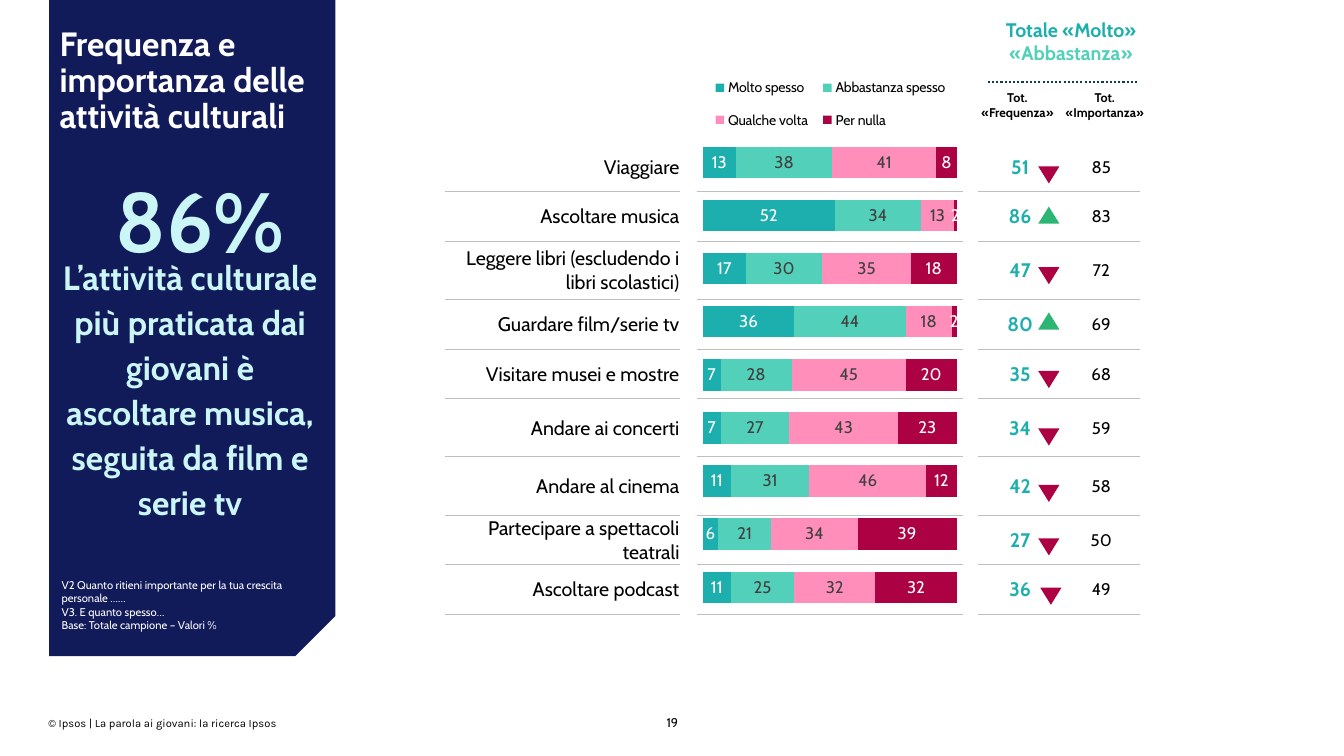
from dataclasses import dataclass

from lxml import etree
from pptx import Presentation
from pptx.chart.chart import Chart
from pptx.chart.data import CategoryChartData
from pptx.dml.color import RGBColor
from pptx.enum.chart import XL_CHART_TYPE, XL_LABEL_POSITION, XL_LEGEND_POSITION
from pptx.enum.dml import MSO_LINE
from pptx.enum.shapes import MSO_CONNECTOR, MSO_SHAPE
from pptx.enum.text import MSO_ANCHOR, PP_ALIGN
from pptx.oxml.ns import qn
from pptx.slide import Slide
from pptx.table import Table, _Cell
from pptx.text.text import Font, TextFrame
from pptx.util import Inches, Pt

STACKED_BAR = XL_CHART_TYPE.BAR_STACKED
LABEL_CENTER = XL_LABEL_POSITION.CENTER
LEGEND_TOP = XL_LEGEND_POSITION.TOP
DOTTED = MSO_LINE.ROUND_DOT
STRAIGHT = MSO_CONNECTOR.STRAIGHT
SNIPPED, TRIANGLE = MSO_SHAPE.SNIP_1_RECTANGLE, MSO_SHAPE.ISOSCELES_TRIANGLE
TOP, MIDDLE, BOTTOM = MSO_ANCHOR.TOP, MSO_ANCHOR.MIDDLE, MSO_ANCHOR.BOTTOM
LEFT, CENTER, RIGHT = PP_ALIGN.LEFT, PP_ALIGN.CENTER, PP_ALIGN.RIGHT

SLIDE_WIDTH, SLIDE_HEIGHT = Inches(13.33), Inches(7.5)
PLAIN_TABLE_STYLE = "{2D5ABB26-0587-4C30-8999-92F81FD0307C}"


@dataclass(frozen=True)
class Theme:
    font: str = "Cabin"
    footer_font: str = "Karla"
    black: str = "000000"
    white: str = "FFFFFF"
    navy: str = "121B5A"
    ice: str = "CBF6F6"
    teal: str = "1DAFAD"
    mint: str = "53D0B9"
    pink: str = "FF8FBA"
    crimson: str = "AC0142"
    green: str = "2DB574"
    gray: str = "404040"
    rule: str = "BFBFBF"
    dots: str = "103C50"
    tiny: int = 8
    small: int = 9
    legend: int = 10
    value: int = 12
    body: int = 14
    title: int = 24
    figure: int = 60


THEME = Theme()


@dataclass(frozen=True)
class Box:
    left: float
    top: float
    width: float
    height: float

    def lengths(self) -> tuple[int, int, int, int]:
        return across(self.left), down(self.top), across(self.width), down(self.height)


@dataclass(frozen=True)
class Style:
    size: int
    color: str = THEME.black
    bold: bool = False
    align: PP_ALIGN = LEFT
    anchor: MSO_ANCHOR = TOP
    spacing: float = 1.0
    font: str = THEME.font


@dataclass(frozen=True)
class Label:
    box: Box
    lines: tuple[str, ...]
    style: Style


@dataclass(frozen=True)
class Answer:
    name: str
    color: str
    label_color: str


@dataclass(frozen=True)
class Activity:
    name: str
    shares: tuple[int, int, int, int]
    importance: int
    row_height: float
    marker_top: float
    marker_left: float = 77.25

    @property
    def frequency(self) -> int:
        return sum(self.shares[:2])


ANSWERS = (
    Answer("Molto spesso", THEME.teal, THEME.white),
    Answer("Abbastanza spesso", THEME.mint, THEME.gray),
    Answer("Qualche volta", THEME.pink, THEME.gray),
    Answer("Per nulla", THEME.crimson, THEME.white),
)
ACTIVITIES = (
    Activity("Viaggiare", (13, 38, 41, 8), 85, 6.55, 22),
    Activity("Ascoltare musica", (52, 34, 13, 2), 83, 6.55, 27.33),
    Activity("Leggere libri (escludendo i libri scolastici)", (17, 30, 35, 18), 72, 7.73, 35.33),
    Activity("Guardare film/serie tv", (36, 44, 18, 2), 69, 6.55, 41.33),
    Activity("Visitare musei e mostre", (7, 28, 45, 20), 68, 6.55, 49.07),
    Activity("Andare ai concerti", (7, 27, 43, 23), 59, 7.7, 56.67),
    Activity("Andare al cinema", (11, 31, 46, 12), 58, 7.73, 64.13),
    Activity("Partecipare a spettacoli teatrali", (6, 21, 34, 39), 50, 6.55, 71.2),
    Activity("Ascoltare podcast", (11, 25, 32, 32), 49, 6.55, 77.73, 77.4),
)
LABELS = (
    Label(Box(48, 94.6, 4.05, 2), ("19",), Style(THEME.small, align=CENTER)),
    Label(Box(3.6, 94.7, 22.73, 2), ("© Ipsos | La parola ai giovani: la ricerca Ipsos",),
          Style(THEME.tiny, font=THEME.footer_font)),
    Label(Box(4.58, 76.4, 18.15, 7.2),
          ("V2 Quanto ritieni importante per la tua crescita personale ……",
           "V3. E quanto spesso…", "Base: Totale campione – Valori %"),
          Style(THEME.tiny, THEME.white, anchor=BOTTOM)),
    Label(Box(4.43, 3.6, 19.73, 13.47), ("Frequenza e importanza delle attività culturali",),
          Style(THEME.title, THEME.white, True, spacing=0.9)),
    Label(Box(4.5, 33.33, 19.28, 41.6),
          ("L’attività culturale più praticata dai giovani è ascoltare musica, "
           "seguita da film e serie tv",),
          Style(THEME.title, THEME.ice, True, CENTER, spacing=1.12)),
    Label(Box(8.63, 20.67, 12.68, 13.6), ("86%",),
          Style(THEME.figure, THEME.ice, True, spacing=1.12)),
)


def across(percent: float) -> int:
    return round(SLIDE_WIDTH * percent / 100)


def down(percent: float) -> int:
    return round(SLIDE_HEIGHT * percent / 100)


def set_font(font: Font, size: int, color: str, bold: bool = False, name: str = THEME.font) -> None:
    font.size, font.bold, font.name = Pt(size), bold, name
    font.color.rgb = RGBColor.from_string(color)


def write_lines(frame: TextFrame, lines: tuple[str, ...], style: Style) -> None:
    for index, line in enumerate(lines):
        paragraph = frame.add_paragraph() if index else frame.paragraphs[0]
        paragraph.text = line
        paragraph.alignment, paragraph.line_spacing = style.align, style.spacing
        set_font(paragraph.font, style.size, style.color, style.bold, style.font)


def draw_label(slide: Slide, label: Label) -> None:
    frame = slide.shapes.add_textbox(*label.box.lengths()).text_frame
    frame.word_wrap, frame.vertical_anchor = True, label.style.anchor
    frame.margin_left = frame.margin_right = frame.margin_top = frame.margin_bottom = 0
    write_lines(frame, label.lines, label.style)


def draw_shape(slide: Slide, kind: MSO_SHAPE, box: Box, color: str):
    shape = slide.shapes.add_shape(kind, *box.lengths())
    shape.shadow.inherit = False
    shape.fill.solid()
    shape.fill.fore_color.rgb = RGBColor.from_string(color)
    shape.line.fill.background()
    return shape


def draw_table(slide: Slide, box: Box, columns: list[float], rows: list[float]) -> Table:
    table = slide.shapes.add_table(len(rows), len(columns), *box.lengths()).table
    table.first_row = table.horz_banding = False
    table._tbl.tblPr.find(qn("a:tableStyleId")).text = PLAIN_TABLE_STYLE
    for column, width in zip(table.columns, columns):
        column.width = across(width)
    for row, height in zip(table.rows, rows):
        row.height = down(height)
    for cell in table.iter_cells():
        cell.fill.background()
    return table


def tighten(cell: _Cell) -> None:
    cell.margin_left = cell.margin_right = cell.margin_top = Inches(0.01)
    cell.margin_bottom = 0
    cell.vertical_anchor = MIDDLE


def rule_below(cell: _Cell) -> None:
    border = etree.Element(qn("a:lnB"), w=str(Pt(0.5)))
    fill = etree.SubElement(border, qn("a:solidFill"))
    etree.SubElement(fill, qn("a:srgbClr"), val=THEME.rule)
    cell._tc.get_or_add_tcPr().insert(0, border)


def place_part(chart: Chart, tag: str, index: int, box: Box, inner: bool = False) -> None:
    part = chart.element.find(".//" + qn(tag))
    for previous in part.findall(qn("c:layout")):
        part.remove(previous)
    layout = etree.Element(qn("c:layout"))
    manual = etree.SubElement(layout, qn("c:manualLayout"))
    settings = [("layoutTarget", "inner")] if inner else []
    settings += [("xMode", "edge"), ("yMode", "edge")]
    settings += [(name, round(percent / 100, 4)) for name, percent in
                 zip("xywh", (box.left, box.top, box.width, box.height))]
    for name, value in settings:
        etree.SubElement(manual, qn("c:" + name), val=str(value))
    part.insert(index, layout)


def draw_chart(slide: Slide) -> None:
    data = CategoryChartData()
    data.categories = [str(number + 1) for number in range(len(ACTIVITIES))]
    for index, answer in enumerate(ANSWERS):
        data.add_series(answer.name, [activity.shares[index] for activity in ACTIVITIES])
    box = Box(32.78, 0.4, 39.75, 80.8)
    chart = slide.shapes.add_chart(STACKED_BAR, *box.lengths(), data).chart
    set_font(chart.font, THEME.legend, THEME.black)
    chart.has_title = False
    chart.category_axis.visible = chart.value_axis.visible = False
    chart.category_axis.reverse_order = True
    chart.value_axis.has_major_gridlines = False
    chart.value_axis.minimum_scale, chart.value_axis.maximum_scale = 0, 100
    plot = chart.plots[0]
    plot.gap_width, plot.overlap, plot.vary_by_categories = 70, 100, False
    for series, answer in zip(plot.series, ANSWERS):
        series.format.fill.solid()
        series.format.fill.fore_color.rgb = RGBColor.from_string(answer.color)
        labels = series.data_labels
        labels.show_value, labels.position = True, LABEL_CENTER
        set_font(labels.font, THEME.value, answer.label_color)
    chart.has_legend = True
    chart.legend.position, chart.legend.include_in_layout = LEGEND_TOP, False
    set_font(chart.legend.font, THEME.legend, THEME.black)
    place_part(chart, "c:plotArea", 0, Box(49.1, 21.8, 47.5, 78.2), inner=True)
    place_part(chart, "c:legend", 1, Box(49.5, 10, 47, 13))


def draw_activities(slide: Slide) -> None:
    table = draw_table(slide, Box(33.08, 18.8, 51.75, 62.4), [17.55, 1.2, 19.8, 1.13, 6.3, 5.77],
                       [activity.row_height for activity in ACTIVITIES])
    for cell in table.iter_cells():
        tighten(cell)
    styles = {0: Style(THEME.body, align=RIGHT), 4: Style(THEME.body, THEME.teal, True, CENTER),
              5: Style(THEME.value, align=CENTER)}
    for row, activity in enumerate(ACTIVITIES):
        texts = (activity.name, str(activity.frequency), str(activity.importance))
        for (column, style), text in zip(styles.items(), texts):
            write_lines(table.cell(row, column).text_frame, (text,), style)
        for column in (0, 2, 4, 5):
            rule_below(table.cell(row, column))


def draw_headings(slide: Slide) -> None:
    total = draw_table(slide, Box(72.3, 1.73, 14.78, 7.6), [14.78], [7.6]).cell(0, 0)
    write_lines(total.text_frame, ("Totale «Molto» ",), Style(THEME.body, THEME.teal, True, CENTER))
    run = total.text_frame.paragraphs[0].add_run()
    run.text = "«Abbastanza»"
    run.font.color.rgb = RGBColor.from_string(THEME.mint)
    subheads = draw_table(slide, Box(72.45, 11.07, 19.5, 5.6), [6.5] * 3, [5.6])
    style = Style(THEME.small, bold=True, align=CENTER)
    for column, lines in enumerate((("Tot. «Frequenza»",), ("Tot.", "«Importanza»"))):
        tighten(subheads.cell(0, column))
        write_lines(subheads.cell(0, column).text_frame, lines, style)
    line = slide.shapes.add_connector(STRAIGHT, across(73.5), down(10.8), across(84.75), down(10.8))
    line.line.color.rgb = RGBColor.from_string(THEME.dots)
    line.line.width, line.line.dash_style = Pt(1.5), DOTTED
    etree.SubElement(line.element.spPr, qn("a:effectLst"))


def draw_markers(slide: Slide) -> None:
    for activity in ACTIVITIES:
        rising = activity.frequency > activity.importance
        box = Box(activity.marker_left, activity.marker_top, 1.58, 2.27)
        marker = draw_shape(slide, TRIANGLE, box, THEME.green if rising else THEME.crimson)
        marker.rotation = 0 if rising else 180


def main() -> None:
    presentation = Presentation()
    presentation.slide_width, presentation.slide_height = SLIDE_WIDTH, SLIDE_HEIGHT
    slide = presentation.slides.add_slide(presentation.slide_layouts[6])
    draw_chart(slide)
    draw_activities(slide)
    panel = draw_shape(slide, SNIPPED, Box(3.65, 0, 21.3, 86.8), THEME.navy)
    panel.adjustments[0] = 0.14
    panel.element.spPr.find(qn("a:xfrm")).set("flipV", "1")
    draw_headings(slide)
    draw_markers(slide)
    for label in LABELS:
        draw_label(slide, label)
    presentation.save("out.pptx")


if __name__ == "__main__":
    main()
